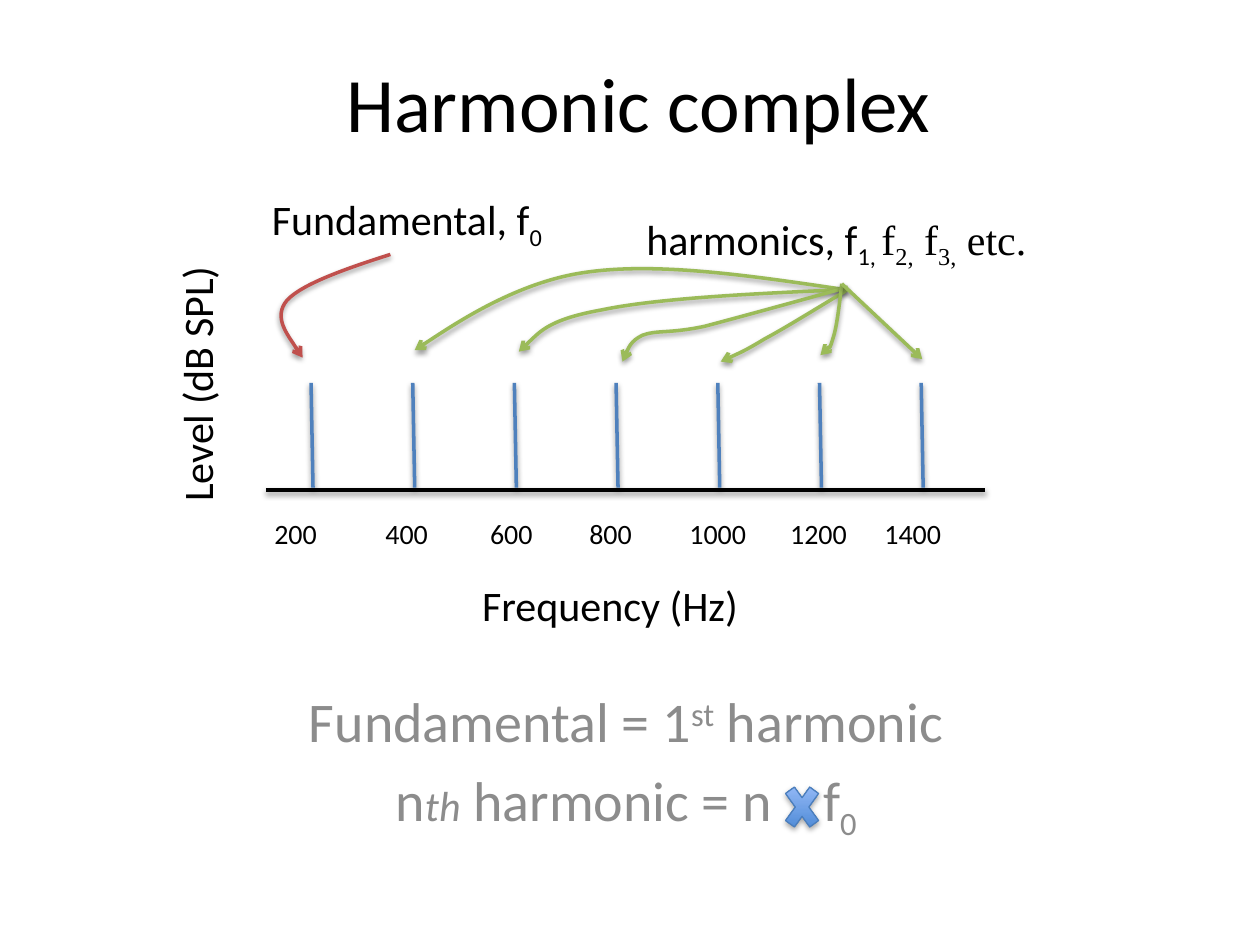
import pptx
import pptx.dml.color
import pptx.enum.shapes
import pptx.enum.text
import pptx.oxml.ns
import pptx.util
from lxml import etree
from pptx.util import Cm, Pt

RGBColor = pptx.dml.color.RGBColor
BLACK = RGBColor(0x00, 0x00, 0x00)
GREY = RGBColor(0x8C, 0x8C, 0x8C)
BLUE = RGBColor(0x4F, 0x81, 0xBD)
RED = RGBColor(0xC0, 0x50, 0x4D)
GREEN = RGBColor(0x9B, 0xBB, 0x59)
SIGN_DARK = RGBColor(0x3F, 0x80, 0xCE)
SIGN_LIGHT = RGBColor(0xA4, 0xC4, 0xFF)
SIGN_EDGE = RGBColor(0x4B, 0x7E, 0xBC)

SUB, SUP = -25000, 30000
qn = pptx.oxml.ns.qn


class Page:
    """The current slide and its style."""

    font = "Calibri"
    line_width = Pt(2)

    def __init__(self, deck):
        self.slide = deck.slides.add_slide(deck.slide_layouts[0])
        self.shapes = self.slide.shapes

    def add_spans(self, para, spans, size, color):
        """Fill a paragraph with (text, baseline, font settings) spans."""
        para.font.name = self.font
        para.font.size = Pt(size)
        para.font.color.rgb = color
        for text, baseline, settings in spans:
            span = para.add_run()
            span.text = text
            if "name" in settings:
                span.font.name = settings["name"]
            if "size" in settings:
                span.font.size = settings["size"]
            if "italic" in settings:
                span.font.italic = settings["italic"]
            if baseline:
                span.font._element.set("baseline", str(baseline))

    def placeholder(self, index, place, lines, size, color):
        box = self.slide.placeholders[index]
        box.left, box.top, box.width, box.height = map(Cm, place)
        frame = box.text_frame
        for number, spans in enumerate(lines):
            para = frame.add_paragraph() if number else frame.paragraphs[0]
            para.alignment = pptx.enum.text.PP_ALIGN.CENTER
            self.add_spans(para, spans, size, color)
        return box

    def label(self, place, spans, size=24, rotation=0):
        box = self.shapes.add_textbox(*map(Cm, place))
        box.rotation = rotation
        box.text_frame.word_wrap = False
        box.text_frame.auto_size = pptx.enum.text.MSO_AUTO_SIZE.SHAPE_TO_FIT_TEXT
        self.add_spans(box.text_frame.paragraphs[0], spans, size, BLACK)
        return box

    def tabbed_label(self, place, words, stops, size):
        box = self.label(place, [("\t".join(words), 0, {})], size)
        box.text_frame.word_wrap = True
        properties = box.text_frame.paragraphs[0]._p.get_or_add_pPr()
        tabs = etree.Element(qn("a:tabLst"))
        for stop in stops:
            etree.SubElement(tabs, qn("a:tab"), pos=str(Cm(stop)), algn="l")
        properties.insert(0, tabs)

    def shadow(self, shape, opacity=38):
        properties = shape._element.spPr
        effects = etree.SubElement(properties, qn("a:effectLst"))
        outer = etree.SubElement(
            effects, qn("a:outerShdw"), blurRad=str(Pt(3.1)), dist=str(Pt(1.6)),
            dir="5400000", rotWithShape="0")
        black = etree.SubElement(outer, qn("a:srgbClr"), val="000000")
        etree.SubElement(black, qn("a:alpha"), val=str(opacity * 1000))

    def stroke(self, shape, color, arrow):
        shape.line.color.rgb = color
        shape.line.width = self.line_width
        if arrow:
            line = shape.line._get_or_add_ln()
            etree.SubElement(line, qn("a:tailEnd"), type="arrow")
        self.shadow(shape)

    def line(self, start, end, color, arrow=False):
        connector = self.shapes.add_connector(
            pptx.enum.shapes.MSO_CONNECTOR.STRAIGHT, *map(Cm, start + end))
        self.stroke(connector, color, arrow)

    def curved_arrow(self, points, color):
        """Draw Bézier pieces: a start, then two handles and an end for each."""
        start, *rest = [(Cm(x), Cm(y)) for x, y in points]
        builder = self.shapes.build_freeform(*start)
        builder.add_line_segments(rest, close=False)
        curve = builder.convert_to_shape()
        outline = next(curve._element.iter(qn("a:path")))
        segments = outline.findall(qn("a:lnTo"))
        for first in range(0, len(segments), 3):
            bend = etree.SubElement(outline, qn("a:cubicBezTo"))
            for segment in segments[first:first + 3]:
                bend.append(segment[0])
                outline.remove(segment)
        curve.fill.background()
        self.stroke(curve, color, arrow=True)

    def times_sign(self, place):
        sign = self.shapes.add_shape(
            pptx.enum.shapes.MSO_SHAPE.MATH_MULTIPLY, *map(Cm, place))
        sign.fill.gradient()
        sign.fill.gradient_angle = 90
        colors = (SIGN_DARK, SIGN_LIGHT)
        for position, stop in enumerate(sign.fill.gradient_stops):
            stop.position = position
            stop.color.rgb = colors[position]
        sign.line.color.rgb = SIGN_EDGE
        sign.line.width = Pt(0.75)
        self.shadow(sign, opacity=35)


def main():
    deck = pptx.Presentation()
    deck.slide_width, deck.slide_height = Cm(25.4), Cm(19.05)
    page = Page(deck)

    # Title and definitions
    title = page.placeholder(0, (2.08, 0, 21.59, 4.09),
                             [[("Harmonic complex", 0, {})]], 44, BLACK)
    title.text_frame.vertical_anchor = pptx.enum.text.MSO_ANCHOR.MIDDLE
    small_italic = {"size": Pt(24), "italic": True}
    body = page.placeholder(1, (3.73, 13.72, 17.78, 4.88), [
        [("Fundamental = 1", 0, {}), ("st", SUP, {}), (" harmonic", 0, {})],
        [("n", 0, {}), ("th", 0, small_italic), (" harmonic = n", 0, {}),
         (" ", 0, {}), ("f", 0, {}), ("0", SUB, {})],
    ], 32, GREY)
    # Widen the gap that holds the times sign
    gap = body.text_frame.paragraphs[1].runs[3]
    gap.font._element.set("spc", "2170")

    # Axis, its labels and the spectrum lines
    page.line((5.36, 9.88), (19.86, 9.88), BLACK)
    page.label((9.47, 11.56, 5.89, 1.3), [("Frequency (Hz)", 0, {})])
    page.label((1.32, 7.06, 5.31, 1.3), [("Level (dB SPL)", 0, {})], rotation=270)
    frequencies = [str(200 * n) for n in range(1, 8)]
    page.tabbed_label((5.28, 10.29, 14.4, 0.94), frequencies,
                      (2.24, 4.35, 6.35, 8.37, 10.4, 12.3), 16)
    for number in range(len(frequencies)):
        x = 6.27 + 2.05 * number
        page.line((x, 7.72), (x + 0.04, 9.83), BLUE)

    # Names of the parts
    times = {"name": "Times New Roman"}
    page.label((5.23, 3.78, 6.05, 1.3), [("Fundamental, f", 0, {}), ("0", SUB, {})])
    page.label((12.78, 4.17, 8.43, 1.27), [
        ("harmonics, f", 0, {}), ("1, ", SUB, {}), ("f", 0, times), ("2,", SUB, times),
        (" f", 0, times), ("3,", SUB, times), (" etc.", 0, times)])

    # Arrows from the names to the spectrum lines
    page.curved_arrow([(7.87, 5.13), (6.99, 5.41), (6.1, 5.72), (5.79, 6.05),
                       (5.49, 6.4), (6.1, 7.21), (6.1, 7.21)], RED)
    harmonic_arrows = [
        [(17.04, 5.84), (15.14, 5.56), (13.26, 5.28), (11.81, 5.49),
         (10.36, 5.69), (8.36, 7.06), (8.36, 7.06)],
        [(17.04, 5.84), (15.11, 5.92), (13.21, 6.02), (12.12, 6.25),
         (11, 6.45), (10.46, 7.09), (10.46, 7.09)],
        [(17.09, 5.79), (15.98, 6.1), (14.88, 6.4), (14.2, 6.58),
         (13.49, 6.73), (13.23, 6.65), (12.95, 6.76),
         (12.7, 6.88), (12.62, 7.16), (12.55, 7.24),
         (12.47, 7.34), (12.55, 7.29), (12.55, 7.29)],
        [(17.09, 5.84), (16.46, 6.22), (15.85, 6.6), (15.42, 6.83),
         (14.99, 7.09), (14.53, 7.29), (14.53, 7.29)],
        [(16.97, 5.72), (16.92, 6.15), (16.87, 6.6), (16.79, 6.83),
         (16.71, 7.09), (16.54, 7.16), (16.54, 7.16)],
    ]
    for points in harmonic_arrows:
        page.curved_arrow(points, GREEN)
    page.line((16.97, 5.72), (18.59, 7.24), GREEN, arrow=True)

    # Times sign in the formula
    page.times_sign((15.7, 15.62, 0.94, 1.3))
    deck.save("out.pptx")


if __name__ == "__main__":
    main()
